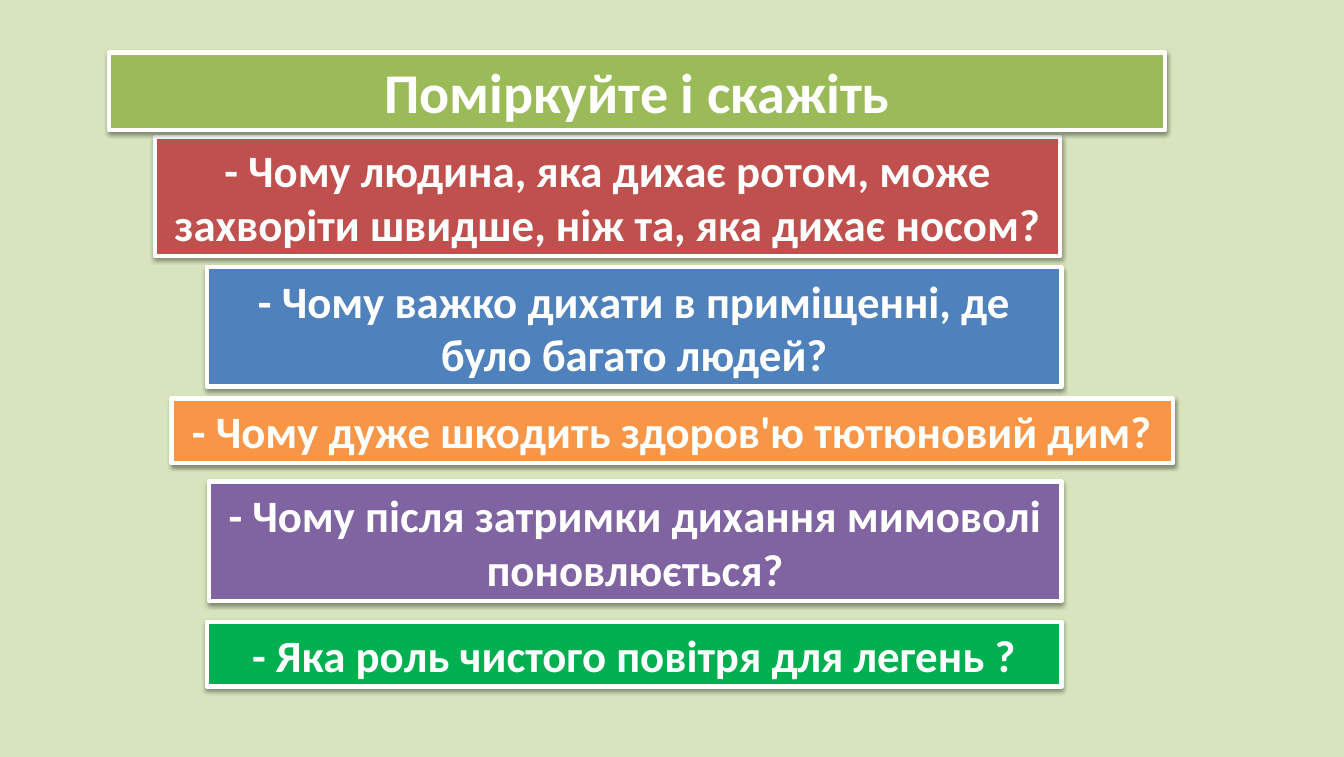
from lxml import etree
from pptx import Presentation
from pptx import util as u
from pptx.dml import color
from pptx.enum import shapes, text
from pptx.oxml import ns

WHITE = "FFFFFF"
TITLE_BOX = (2.74, 1.32, 26.59, 1.96)
QUESTIONS_BOX = (3.91, 3.45, 25.61, 13.83)
ONE_LINE, TWO_LINES = 1.63, 3.0
QUESTIONS = [
    ("- Чому людина, яка дихає ротом, може захворіти швидше, ніж та, яка дихає носом?",
     "C0504D", 0, 0, 22.78, TWO_LINES),
    ("- Чому важко дихати в приміщенні, де було багато людей?",
     "4F81BD", 1.3, 3.28, 21.51, TWO_LINES),
    ("- Чому дуже шкодить здоров'ю тютюновий дим?",
     "F79646", 0.41, 6.58, 25.2, ONE_LINE),
    ("- Чому після затримки дихання мимоволі поновлюється?",
     "8064A2", 1.35, 8.67, 21.46, TWO_LINES),
    ("- Яка роль чистого повітря для легень ?",
     "00B050", 1.3, 12.2, 21.51, ONE_LINE),
]


def rgb(value):
    """Turn a hex string into a colour."""
    return color.RGBColor.from_string(value)


def add_shadow(shape):
    """Give the shape a soft shadow that falls straight down."""
    shape.shadow.inherit = False
    effects = shape._element.spPr.find(ns.qn("a:effectLst"))
    shadow = etree.SubElement(effects, ns.qn("a:outerShdw"), blurRad="40000",
                              dist="20000", dir="5400000", rotWithShape="0")
    black = etree.SubElement(shadow, ns.qn("a:srgbClr"), val="000000")
    etree.SubElement(black, ns.qn("a:alpha"), val="38000")


def write_text(frame, content, size=32, bold=True, font="Calibri", fill=WHITE):
    """Write one centred paragraph into the text frame."""
    frame.word_wrap = True
    frame.vertical_anchor = text.MSO_ANCHOR.MIDDLE
    paragraph = frame.paragraphs[0]
    paragraph.alignment = text.PP_ALIGN.CENTER
    run = paragraph.add_run()
    run.text = content
    run.font.name = font
    run.font.size = u.Pt(size)
    run.font.bold = bold
    run.font.color.rgb = rgb(fill)


def add_banner(slide, box, content, fill, **text_format):
    """Add a filled, white-edged banner with its text."""
    shape = slide.shapes.add_shape(shapes.MSO_SHAPE.RECTANGLE, *map(u.Cm, box))
    shape.fill.solid()
    shape.fill.fore_color.rgb = rgb(fill)
    shape.line.color.rgb = rgb(WHITE)
    shape.line.width = u.Pt(3)
    add_shadow(shape)
    write_text(shape.text_frame, content, **text_format)


def add_questions(slide, box):
    """Stack the question banners from the top left corner of the box."""
    left, top = box[:2]
    for content, fill, indent, drop, width, height in QUESTIONS:
        add_banner(slide, (left + indent, top + drop, width, height), content, fill)


def add_title(slide, box):
    """Add the title banner."""
    add_banner(slide, box, "Поміркуйте і скажіть", "9BBB59", size=40)


def main():
    """Build and save the presentation."""
    presentation = Presentation()
    presentation.slide_width = u.Cm(33.83)
    presentation.slide_height = u.Cm(19.05)
    slide = presentation.slides.add_slide(presentation.slide_layouts[6])
    slide.background.fill.solid()
    slide.background.fill.fore_color.rgb = rgb("D7E4BD")
    add_questions(slide, QUESTIONS_BOX)
    add_title(slide, TITLE_BOX)
    presentation.save("out.pptx")


if __name__ == "__main__":
    main()
